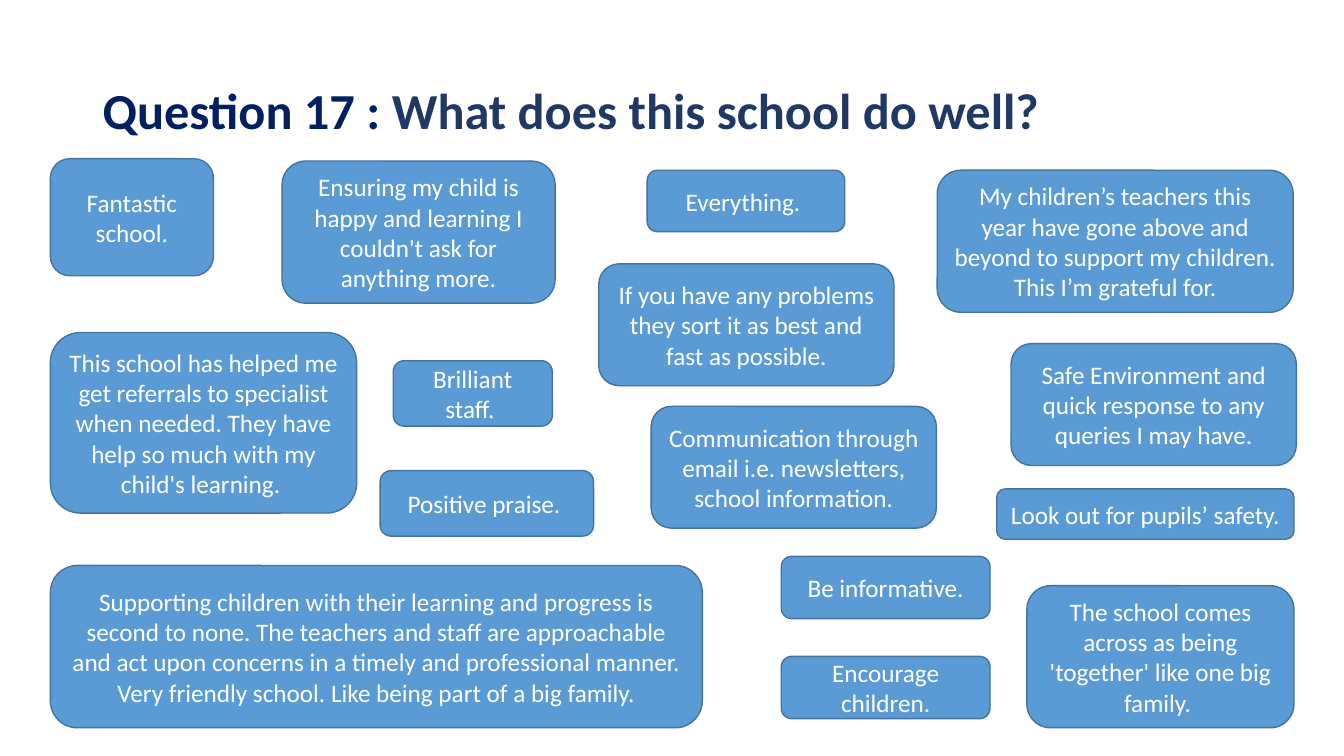
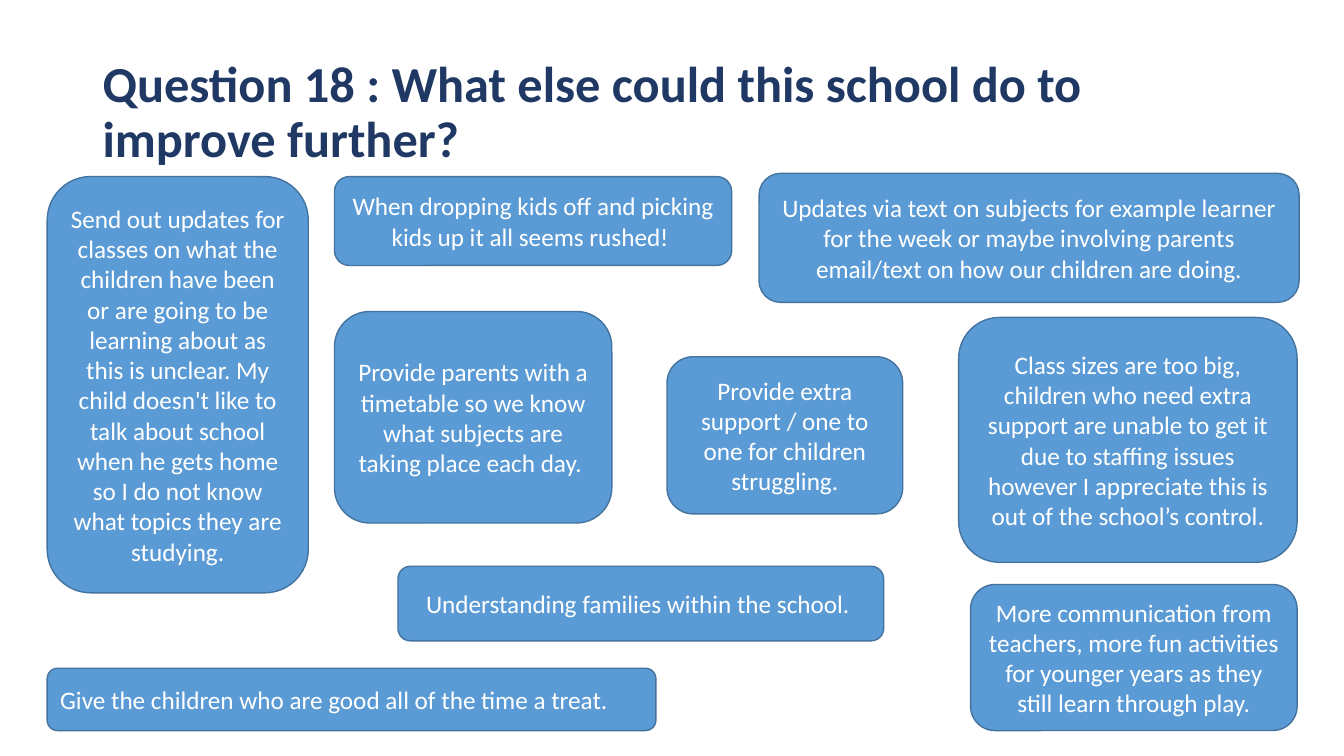
from collections import namedtuple

from pptx import Presentation
from pptx.dml.color import RGBColor
from pptx.enum.shapes import MSO_SHAPE
from pptx.enum.text import MSO_ANCHOR, MSO_AUTO_SIZE, PP_ALIGN
from pptx.util import Cm, Pt

DEEP_NAVY = RGBColor(0x00, 0x20, 0x60)
NAVY = RGBColor(0x20, 0x38, 0x64)
BLUE = RGBColor(0x5B, 0x9B, 0xD5)
EDGE_BLUE = RGBColor(0x43, 0x73, 0x9E)
WHITE = RGBColor(0xFF, 0xFF, 0xFF)
FONT = "Calibri"
TITLE_ONLY = 5

Box = namedtuple("Box", "left top width height")
Comment = namedtuple("Comment", "box text align", defaults=[PP_ALIGN.CENTER])

TITLE_BOX = Box(2.33, 1.02, 29.21, 3.68)
STRENGTHS_BOX = Box(1.27, 4, 31.4, 14.34)
IMPROVEMENTS_BOX = Box(1.19, 4.37, 31.55, 14.04)

STRENGTHS_TITLE = [
    ("Question 17 : ", DEEP_NAVY),
    ("What does this school do well?", NAVY),
]
STRENGTHS = [
    Comment(Box(0, 0, 4.11, 2.95), "Fantastic school."),
    Comment(Box(5.84, 0.06, 6.88, 3.58),
            "Ensuring my child is happy and learning I couldn't ask for anything more."),
    Comment(Box(15.04, 0.29, 4.98, 1.55), "Everything. "),
    Comment(Box(22.35, 0.29, 8.97, 3.58),
            "My children’s teachers this year have gone above and beyond to support "
            "my children. This I’m grateful for."),
    Comment(Box(13.82, 2.65, 7.44, 3.07),
            "If you have any problems they sort it as best and fast as possible."),
    Comment(Box(0, 4.38, 7.72, 4.55),
            "This school has helped me get referrals to specialist when needed. "
            "They have help so much with my child's learning. "),
    Comment(Box(8.64, 5.09, 4.01, 1.65), "Brilliant staff. "),
    Comment(Box(24.21, 4.66, 7.19, 3.07),
            "Safe Environment and quick response to any queries I may have."),
    Comment(Box(15.14, 6.24, 7.19, 3.07),
            "Communication through email i.e. newsletters, school information."),
    Comment(Box(8.31, 7.86, 5.38, 1.65), "Positive praise. "),
    Comment(Box(23.85, 8.32, 7.49, 1.27), "Look out for pupils’ safety. "),
    Comment(Box(0, 10.25, 16.43, 4.09),
            "Supporting children with their learning and progress is second to none. "
            "The teachers and staff are approachable and act upon concerns in a timely "
            "and professional manner. Very friendly school. Like being part of a big family."),
    Comment(Box(18.42, 10.02, 5.26, 1.57), "Be informative."),
    Comment(Box(18.42, 12.54, 5.26, 1.57), "Encourage children."),
    Comment(Box(24.61, 10.76, 6.73, 3.58),
            "The school comes across as being 'together' like one big family. "),
]

IMPROVEMENTS_TITLE = [
    ("Question 18 : What else could this school do to improve further?", NAVY),
]
IMPROVEMENTS = [
    Comment(Box(0, 0.08, 6.58, 10.49),
            "Send out updates for classes on what the children have been or are going "
            "to be learning about as this is unclear. My child doesn't like to talk about "
            "school when he gets home so I do not know what topics they are studying."),
    Comment(Box(7.24, 0.08, 10.01, 2.24),
            "When dropping kids off and picking kids up it all seems rushed! "),
    Comment(Box(17.94, 0, 13.61, 3.25),
            "Updates via text on subjects for example learner for the week or maybe "
            "involving parents email/text on how our children are doing."),
    Comment(Box(7.24, 3.48, 6.99, 5.33),
            "Provide parents with a timetable so we know what subjects are taking "
            "place each day. "),
    Comment(Box(15.62, 4.62, 5.94, 3.96),
            "Provide extra support / one to one for children struggling."),
    Comment(Box(22.97, 3.63, 8.53, 6.17),
            "Class sizes are too big, children who need extra support are unable to "
            "get it due to staffing issues however I appreciate this is out of the "
            "school’s control."),
    Comment(Box(8.84, 9.9, 12.24, 1.88), "Understanding families within the school. "),
    Comment(Box(23.27, 10.36, 8.23, 3.68),
            "More communication from teachers, more fun activities for younger years "
            "as they still learn through play."),
    Comment(Box(0, 12.47, 15.34, 1.57),
            "Give the children who are good all of the time a treat.", PP_ALIGN.LEFT),
]


def style_font(font, size, color, bold=False):
    """Apply the deck's typeface with the given size, colour and weight."""
    font.name = FONT
    font.size = Pt(size)
    font.color.rgb = color
    font.bold = bold


def fill_title(title, box, spans):
    """Place the title placeholder in its box and write its coloured spans."""
    title.left, title.top, title.width, title.height = map(Cm, box)
    frame = title.text_frame
    frame.auto_size = MSO_AUTO_SIZE.NONE
    frame.vertical_anchor = MSO_ANCHOR.MIDDLE
    para = frame.paragraphs[0]
    para.alignment = PP_ALIGN.LEFT
    para.line_spacing = 0.9
    for text, color in spans:
        span = para.add_run()
        span.text = text
        style_font(span.font, 36, color, bold=True)


def add_comment(page, region, comment):
    """Draw one rounded comment, placed relative to the region's corner."""
    box = comment.box
    bubble = page.shapes.add_shape(
        MSO_SHAPE.ROUNDED_RECTANGLE,
        Cm(region.left + box.left), Cm(region.top + box.top),
        Cm(box.width), Cm(box.height))
    bubble.shadow.inherit = False
    bubble.fill.solid()
    bubble.fill.fore_color.rgb = BLUE
    bubble.line.color.rgb = EDGE_BLUE
    bubble.line.width = Pt(1)
    frame = bubble.text_frame
    frame.word_wrap = True
    frame.vertical_anchor = MSO_ANCHOR.MIDDLE
    frame.text = comment.text
    para = frame.paragraphs[0]
    para.alignment = comment.align
    style_font(para.runs[0].font, 18, WHITE)


def add_question_page(deck, title_spans, region, comments):
    """Add a page with a question as title and the answers as comments."""
    page = deck.slides.add_slide(deck.slide_layouts[TITLE_ONLY])
    fill_title(page.shapes.title, TITLE_BOX, title_spans)
    for comment in comments:
        add_comment(page, region, comment)


def main():
    """Build and save the survey deck."""
    deck = Presentation()
    deck.slide_width, deck.slide_height = Cm(33.87), Cm(19.05)
    add_question_page(deck, STRENGTHS_TITLE, STRENGTHS_BOX, STRENGTHS)
    add_question_page(deck, IMPROVEMENTS_TITLE, IMPROVEMENTS_BOX, IMPROVEMENTS)
    deck.save("out.pptx")


if __name__ == "__main__":
    main()
